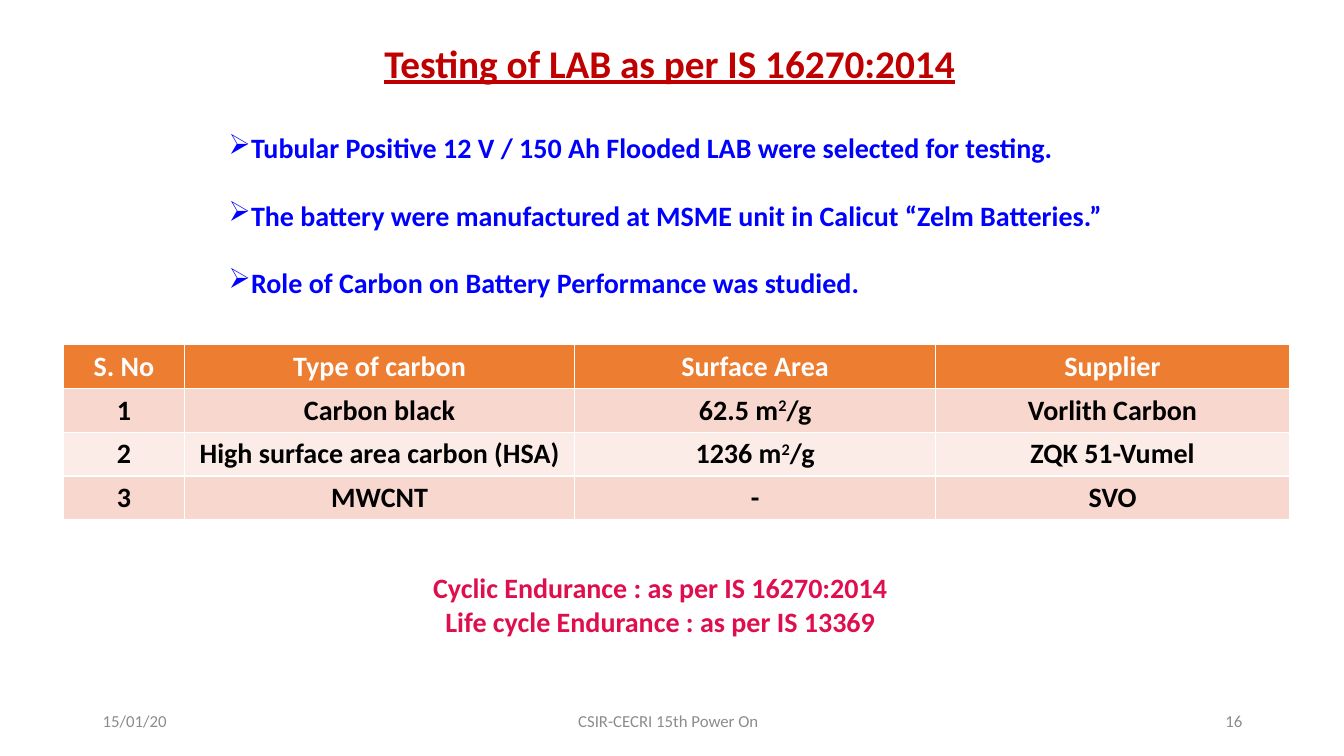
import pptx
import pptx.dml.color
import pptx.enum.text
import pptx.util
from lxml import etree

Inches = pptx.util.Inches
Pt = pptx.util.Pt
RGBColor = pptx.dml.color.RGBColor
ALIGN = pptx.enum.text.PP_ALIGN
ANCHOR = pptx.enum.text.MSO_ANCHOR

# Colours
RED = RGBColor(0xC0, 0x00, 0x00)
BLUE = RGBColor(0x00, 0x00, 0xFF)
CRIMSON = RGBColor(0xDF, 0x0F, 0x4F)
GRAY = RGBColor(0x8C, 0x8C, 0x8C)
WHITE = RGBColor(0xFF, 0xFF, 0xFF)
BLACK = RGBColor(0x00, 0x00, 0x00)
ORANGE = RGBColor(0xED, 0x7D, 0x31)
BANDS = [RGBColor(0xF8, 0xD7, 0xCE), RGBColor(0xFC, 0xEC, 0xE8)]

# Content
TITLE = "Testing of LAB as per IS 16270:2014"
FINDINGS = [
    "Tubular Positive 12 V / 150 Ah Flooded LAB were selected for testing.",
    "The battery were manufactured at MSME unit in Calicut “Zelm Batteries.”",
    "Role of Carbon on Battery Performance was studied.",
]
CARBONS = [
    ["S. No", "Type of carbon", "Surface Area", "Supplier"],
    ["1", "Carbon black", "62.5 m^2^/g", "Vorlith Carbon"],
    ["2", "High surface area carbon (HSA)", "1236 m^2^/g", "ZQK 51-Vumel"],
    ["3", "MWCNT", "-", "SVO"],
]  # text between carets is raised
COLUMN_WIDTHS = [1.2, 3.87, 3.58, 3.51]
ROW_HEIGHT = 0.43
STANDARDS = [
    "Cyclic Endurance : as per IS 16270:2014",
    "Life cycle Endurance : as per IS 13369",
]
FOOTERS = [
    ("15/01/20", 0.92, 3, ALIGN.LEFT),
    ("CSIR-CECRI 15th Power On", 4.38, 4.5, ALIGN.CENTER),
    ("16", 9.42, 3, ALIGN.RIGHT),
]

# Text formats
TITLE_FONT = {"size": Pt(28), "bold": True, "underline": True}
BODY_FONT = {"size": Pt(20), "bold": True}
FOOTER_FONT = {"size": Pt(12), "bold": False}


def write(paragraph, text, font_values, color, align):
    paragraph.alignment = align
    for index, part in enumerate(text.split("^")):
        run = paragraph.add_run()
        run.text = part
        for name, value in {"name": "Calibri", **font_values}.items():
            setattr(run.font, name, value)
        run.font.color.rgb = color
        if index % 2:
            run.font._element.set("baseline", "30000")


def add_text(slide, box, lines, font_values, color, align, anchor=ANCHOR.TOP):
    frame = slide.shapes.add_textbox(*map(Inches, box)).text_frame
    frame.word_wrap = True
    frame.vertical_anchor = anchor
    for index, line in enumerate(lines):
        paragraph = frame.add_paragraph() if index else frame.paragraphs[0]
        write(paragraph, line, font_values, color, align)
    return frame.paragraphs


def add_bullet(paragraph, indent):
    properties = paragraph._p.get_or_add_pPr()
    properties.set("marL", str(Inches(indent)))
    properties.set("indent", str(-Inches(indent)))
    bullet = etree.SubElement(properties, pptx.oxml.ns.qn("a:buChar"))
    bullet.set("char", "➢")


def add_carbon_table(slide):
    table = slide.shapes.add_table(
        len(CARBONS), len(COLUMN_WIDTHS), Inches(0.63), Inches(3.42),
        Inches(sum(COLUMN_WIDTHS)), Inches(ROW_HEIGHT * len(CARBONS))).table
    for column, width in zip(table.columns, COLUMN_WIDTHS):
        column.width = Inches(width)
    for row, values in enumerate(CARBONS):
        for column, value in enumerate(values):
            cell = table.cell(row, column)
            cell.fill.solid()
            cell.fill.fore_color.rgb = BANDS[(row - 1) % 2] if row else ORANGE
            write(cell.text_frame.paragraphs[0], value, BODY_FONT,
                  BLACK if row else WHITE, ALIGN.CENTER)


def main():
    deck = pptx.Presentation()
    deck.slide_width, deck.slide_height = Inches(13.33), Inches(7.5)
    slide = deck.slides.add_slide(deck.slide_layouts[6])

    # Title
    title = add_text(slide, (0.89, 0, 11.5, 1.3), [TITLE], TITLE_FONT, RED,
                     ALIGN.CENTER, ANCHOR.MIDDLE)
    title[0].line_spacing = 0.9

    # Footer
    for text, left, width, align in FOOTERS:
        add_text(slide, (left, 6.95, width, 0.4), [text], FOOTER_FONT, GRAY,
                 align, ANCHOR.MIDDLE)

    # Bulleted findings
    for finding in add_text(slide, (2.17, 1.25, 8.89, 1.78), FINDINGS,
                            BODY_FONT, BLUE, ALIGN.LEFT):
        finding.space_after = Pt(24)
        add_bullet(finding, 0.22)

    # Carbon types and the standards applied
    add_carbon_table(slide)
    add_text(slide, (4.1, 5.61, 4.9, 0.77), STANDARDS, BODY_FONT, CRIMSON,
             ALIGN.CENTER)

    deck.save("out.pptx")


if __name__ == "__main__":
    main()
